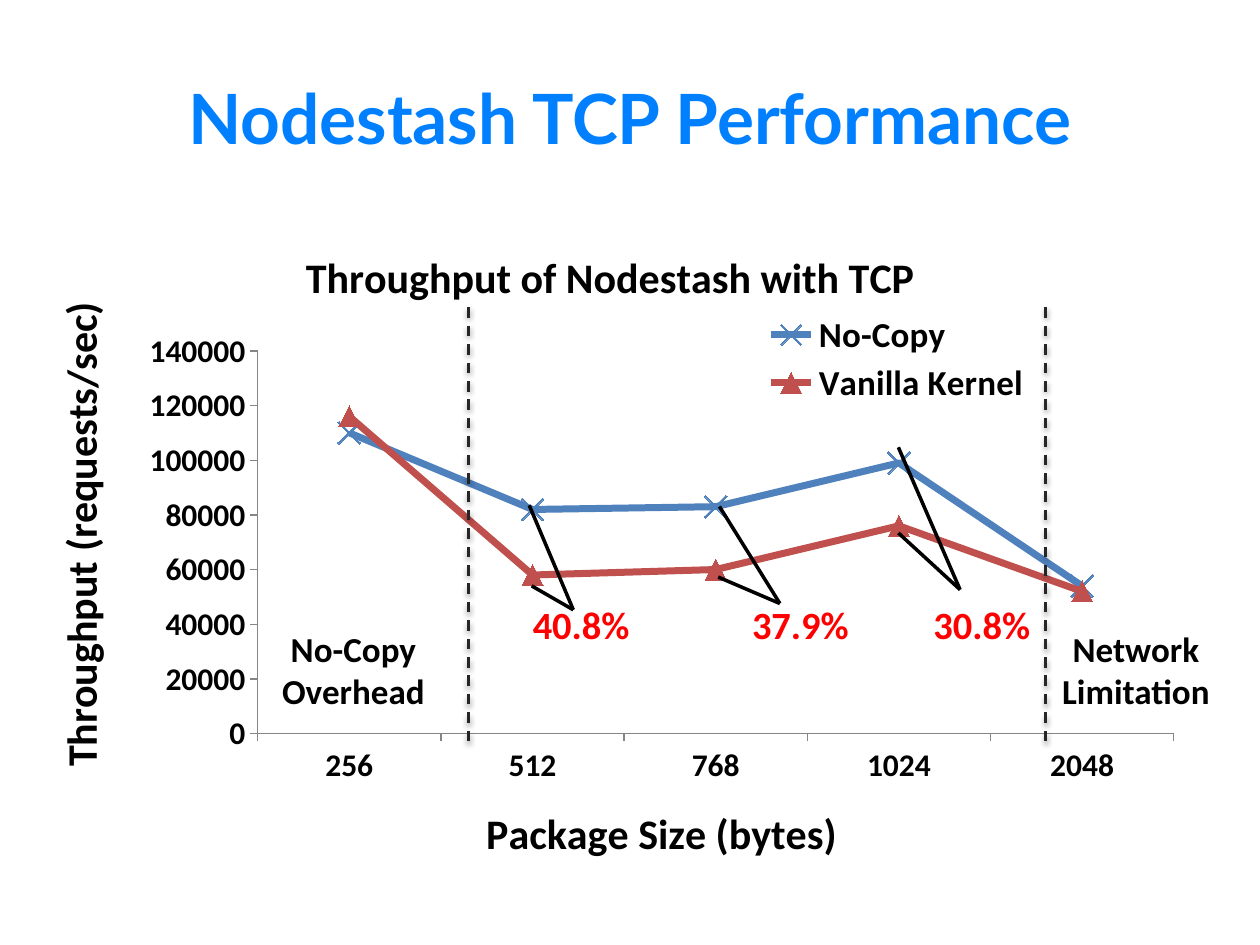
from lxml.etree import SubElement
from pptx import Presentation
from pptx.chart.data import CategoryChartData
from pptx.dml.color import RGBColor
from pptx.enum.chart import XL_CHART_TYPE as CT, XL_LEGEND_POSITION as LP
from pptx.enum.chart import XL_MARKER_STYLE as MS, XL_TICK_MARK as TM
from pptx.enum.dml import MSO_LINE
from pptx.enum.shapes import MSO_CONNECTOR
from pptx.enum.text import MSO_ANCHOR, MSO_AUTO_SIZE, PP_ALIGN
from pptx.oxml import parse_xml
from pptx.oxml.ns import nsdecls, qn
from pptx.util import Inches, Pt

COLORS = {"title": "0080FF", "text": "000000", "gain": "FF0000", "border": "262626",
          "axis": "868686", "nocopy": "4F81BD", "vanilla": "C0504D"}
FONT = "Calibri"
SIZES = ["256", "512", "768", "1024", "2048"]
# name, values, colour, marker, marker size
SERIES = [
    ("No-Copy", (110000, 82000, 83000, 99000, 54000), "nocopy", MS.X, 13),
    ("Vanilla Kernel", (116000, 58000, 60000, 76000, 52000), "vanilla", MS.TRIANGLE, 12),
]
# label, label column, tip, end at Vanilla Kernel, end at No-Copy
GAINS = [
    ("37.9%", 58.7, (61.9, 47.9), (57, 45.8), (57.1, 40.2)),
    ("40.8%", 41.3, (45.5, 48.4), (42.2, 46.5), (42, 40.1)),
    ("30.8%", 73.1, (76.2, 46.8), (71.3, 42.3), (71.3, 35.5)),
]
BORDER_COLS = (37.2, 83)
# lines, column, width
REGIONS = [(("No-Copy", "Overhead"), 21.3, 13.5), (("Network", "Limitation"), 83.2, 13.9)]


def grid(*units):
    """Lengths on a grid of 100 columns by 75 rows."""
    return [Inches(u / 10) for u in units]


def rgb(name):
    return RGBColor.from_string(COLORS[name])


def style_font(font, size, color="text", name=FONT):
    font.name, font.size, font.bold = name, Pt(size), True
    font.color.rgb = rgb(color)


def place(element, after, inner=False, **percents):
    """Give a chart part a manual layout, in percent of the chart's size."""
    for old in element.findall(qn("c:layout")):
        element.remove(old)
    layout = parse_xml(f"<c:layout {nsdecls('c')}><c:manualLayout/></c:layout>")
    settings = {"layoutTarget": "inner"} if inner else {}
    settings.update(xMode="edge", yMode="edge")
    settings.update((tag, percent / 100) for tag, percent in percents.items())
    for tag, val in settings.items():
        SubElement(layout[0], qn(f"c:{tag}")).set("val", str(val))
    if after:
        element.find(qn(after)).addnext(layout)
    else:
        element.insert(0, layout)


def set_chart_title(title, text, x, y):
    p = title.text_frame.paragraphs[0]
    p.text = text
    style_font(p.font, 24)
    place(title._element, "c:tx", x=x, y=y)


def style_axis(axis, text, x, y):
    axis.has_major_gridlines = False
    axis.major_tick_mark = TM.OUTSIDE
    axis.format.line.color.rgb = rgb("axis")
    style_font(axis.tick_labels.font, 18)
    set_chart_title(axis.axis_title, text, x, y)


def add_throughput_chart(s):
    data = CategoryChartData()
    data.categories = SIZES
    for name, values, *_ in SERIES:
        data.add_series(name, values)
    chart = s.shapes.add_chart(CT.LINE_MARKERS, *grid(3.2, 17.6, 91.8, 53.4), data).chart
    chart.font.name = FONT
    chart.has_title = True
    set_chart_title(chart.chart_title, "Throughput of Nodestash with TCP", 22.3, 2.9)
    place(chart._chartSpace.chart.plotArea, None, True, x=18.8, y=19.2, w=79.2, h=56.9)

    # Axes
    style_axis(chart.category_axis, "Package Size (bytes)", 37.9, 85.6)
    val_axis = chart.value_axis
    style_axis(val_axis, "Throughput (requests/sec)", 0.4, 10.8)
    val_axis.minimum_scale, val_axis.maximum_scale, val_axis.major_unit = 0, 140000, 20000
    val_axis.tick_labels.number_format = "General"
    val_axis.tick_labels.number_format_is_linked = False

    # Legend
    chart.has_legend = True
    legend = chart.legend
    legend.position, legend.include_in_layout = LP.RIGHT, True
    style_font(legend.font, 20)
    place(legend._element, "c:legendPos", x=62.6, y=12.9, w=23, h=15)

    # Series
    for series, (_, _, color, style, size) in zip(chart.plots[0].series, SERIES):
        series.smooth = False
        line, marker = series.format.line, series.marker
        line.color.rgb, line.width = rgb(color), Pt(4)
        marker.style, marker.size = style, size
        marker.format.line.color.rgb = rgb(color)
        if style == MS.X:
            marker.format.fill.background()
        else:
            marker.format.fill.solid()
            marker.format.fill.fore_color.rgb = rgb(color)


def add_line(s, start, end, color="text", width=2, dashed=False):
    c = s.shapes.add_connector(MSO_CONNECTOR.STRAIGHT, *grid(*start, *end))
    c.line.color.rgb, c.line.width = rgb(color), Pt(width)
    effects = SubElement(c._element.spPr, qn("a:effectLst"))
    if dashed:
        c.line.dash_style = MSO_LINE.DASH
        effects.append(parse_xml(
            f'<a:outerShdw {nsdecls("a")} blurRad="{Pt(3.1)}" dist="{Pt(1.6)}" dir="5400000" '
            'rotWithShape="0"><a:srgbClr val="000000"><a:alpha val="38000"/></a:srgbClr>'
            '</a:outerShdw>'))


def add_label(s, box, lines, size, color="text", align=None):
    tf = s.shapes.add_textbox(*grid(*box)).text_frame
    tf.word_wrap, tf.auto_size = False, MSO_AUTO_SIZE.SHAPE_TO_FIT_TEXT
    for i, text in enumerate(lines):
        p = tf.add_paragraph() if i else tf.paragraphs[0]
        p.text, p.alignment = text, align
        style_font(p.font, size, color)


def add_title(s, text):
    sp = s.shapes.title
    sp.left, sp.top, sp.width, sp.height = grid(5, 3, 90, 12.5)
    tf = sp.text_frame
    tf.text, tf.vertical_anchor = text, MSO_ANCHOR.MIDDLE
    p = tf.paragraphs[0]
    p.alignment = PP_ALIGN.CENTER
    style_font(p.font, 39.6, "title", "Lato")


def main():
    prs = Presentation()
    prs.slide_width, prs.slide_height = grid(100, 75)
    s = prs.slides.add_slide(prs.slide_layouts[5])
    add_throughput_chart(s)
    add_title(s, "Nodestash TCP Performance")

    # Gains of No-Copy over Vanilla Kernel
    for text, col, tip, *ends in GAINS:
        for end in ends:
            add_line(s, tip, end)
        add_label(s, (col, 47.2, 9.8, 4.7), [text], 22, "gain")

    # Regions at both sides of the plot
    for col in BORDER_COLS:
        add_line(s, (col, 24.4), (col, 59.1), "border", 1.5, dashed=True)
    for lines, col, width in REGIONS:
        add_label(s, (col, 49.3, width, 7.7), lines, 20, align=PP_ALIGN.CENTER)
    prs.save("out.pptx")


if __name__ == "__main__":
    main()
